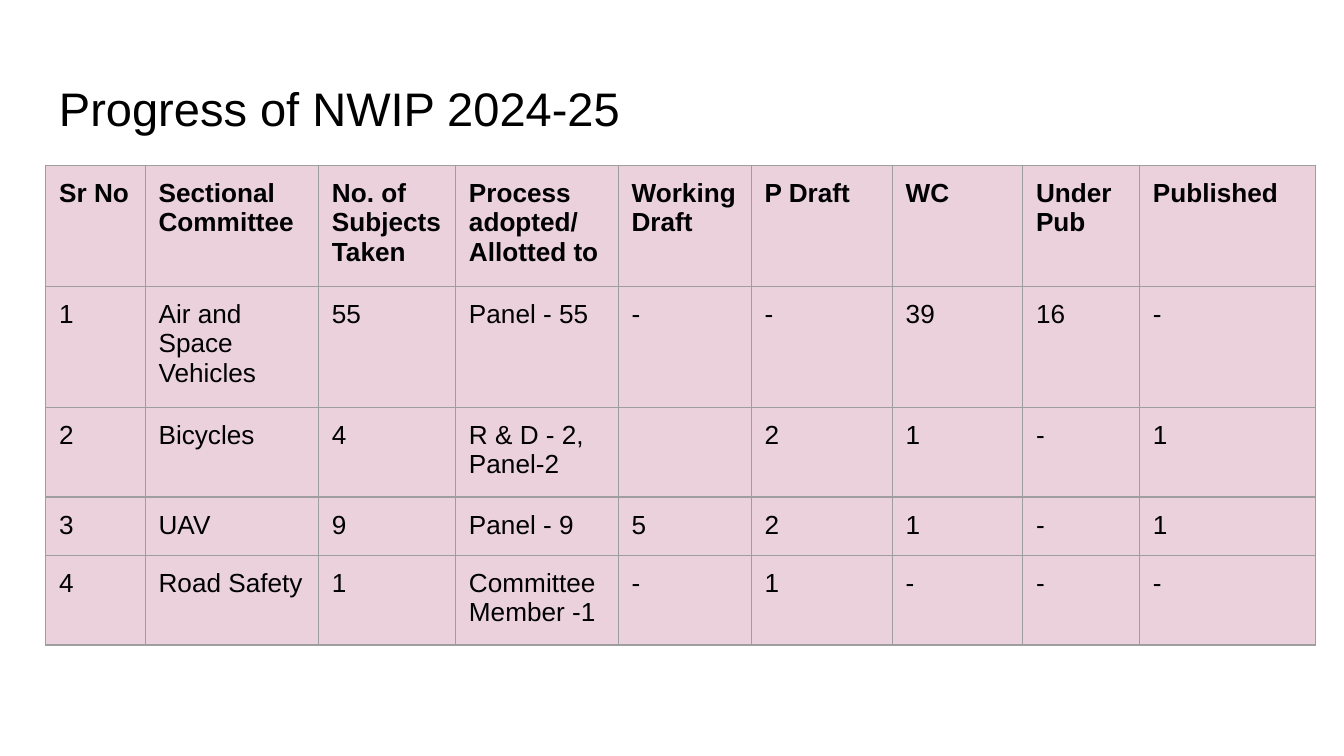
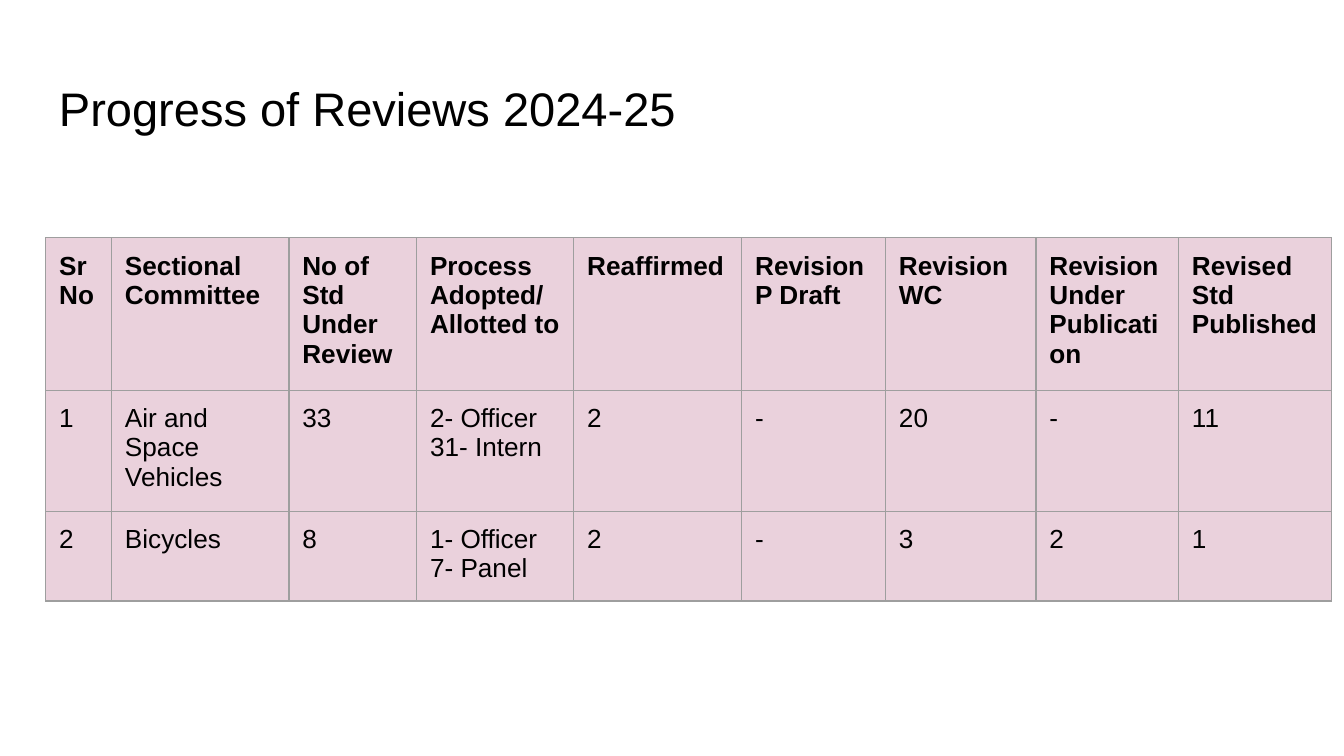
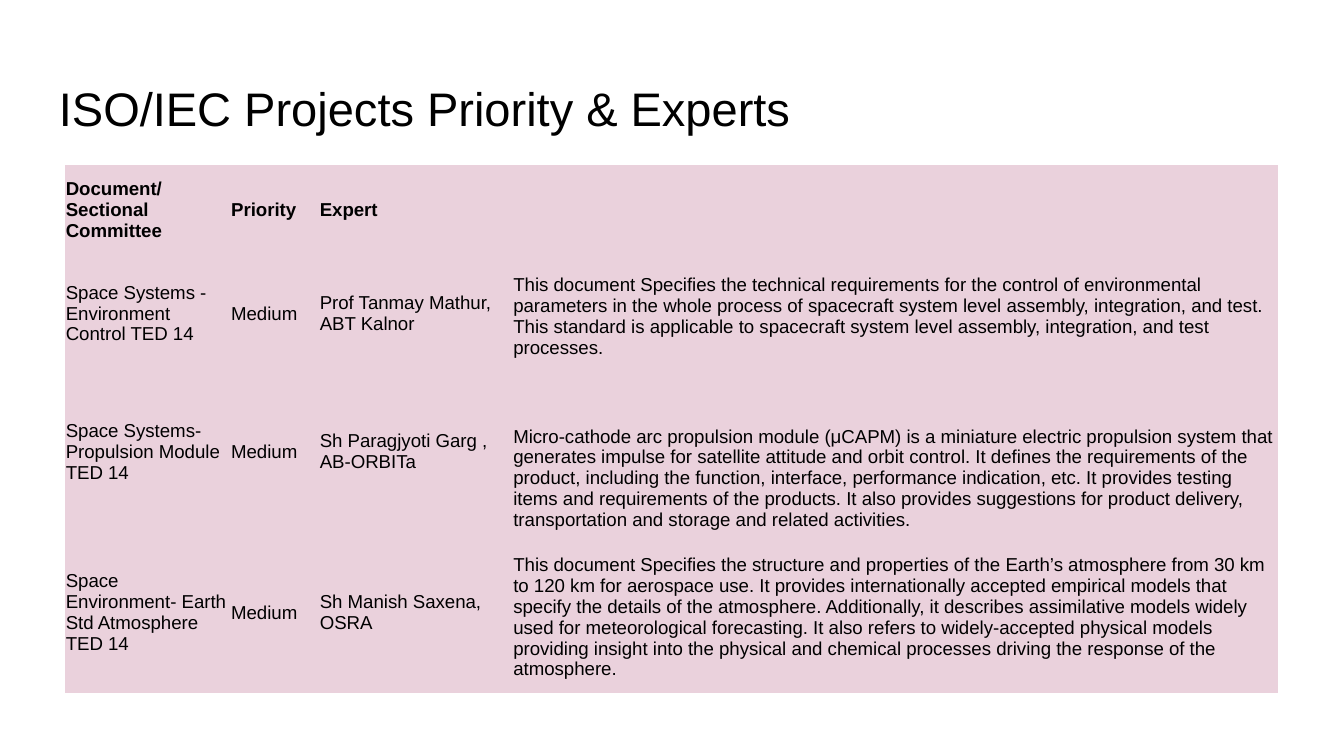
import dataclasses

import lxml.etree
import pptx
import pptx.dml.color
import pptx.enum.text
import pptx.oxml.ns
import pptx.util

Inches = pptx.util.Inches
Pt = pptx.util.Pt
Anchor = pptx.enum.text.MSO_ANCHOR
qualified = pptx.oxml.ns.qn


@dataclasses.dataclass(frozen=True)
class Theme:
    font: str = "Arial"
    ink: str = "000000"
    cell: str = "EAD1DC"
    border: str = "9E9E9E"
    border_width: float = 0.75
    title_size: float = 25.2
    progress_size: float = 14
    expert_size: float = 10


THEME = Theme()
ROOMY = (0.1, 0.1, 0.1, 0.1)
TIGHT = (0.01, 0.01, 0.01, 0.1)

NWIP_ROWS = [
    ["Sr No", "Sectional Committee", "No. of Subjects Taken", "Process adopted/ Allotted to",
     "Working Draft", "P Draft", "WC", "Under Pub", "Published"],
    ["1", "Air and Space Vehicles", "55", "Panel - 55", "-", "-", "39", "16", "-"],
    ["2", "Bicycles", "4", "R & D - 2, Panel-2", "", "2", "1", "-", "1"],
    ["3", "UAV", "9", "Panel - 9", "5", "2", "1", "-", "1"],
    ["4", "Road Safety", "1", "Committee Member -1", "-", "1", "-", "-", "-"],
]

REVIEW_ROWS = [
    ["Sr No", "Sectional Committee", "No of Std Under Review", "Process Adopted/ Allotted to",
     "Reaffirmed", "Revision\nP Draft", "Revision\nWC", "Revision\nUnder Publication",
     "Revised Std Published"],
    ["1", "Air and Space Vehicles", "33", "2- Officer\n31- Intern", "2", "-", "20", "-", "11"],
    ["2", "Bicycles", "8", "1- Officer 7- Panel", "2", "-", "3", "2", "1"],
]

EXPERT_ROWS = [
    ["Document/Sectional Committee", "Priority", "Expert", ""],
    ["Space Systems - Environment Control TED 14", "Medium", "Prof Tanmay Mathur, ABT Kalnor",
     "This document Specifies the technical requirements for the control of environmental "
     "parameters in the whole process of spacecraft system level assembly, integration, and "
     "test. This standard is applicable to spacecraft system level assembly, integration, and "
     "test processes."],
    ["Space Systems- Propulsion Module TED 14", "Medium", "Sh Paragjyoti Garg , AB-ORBITa",
     "Micro-cathode arc propulsion module (μCAPM) is a miniature electric propulsion system "
     "that generates impulse for satellite attitude and orbit control. It defines the "
     "requirements of the product, including the function, interface, performance indication, "
     "etc. It provides testing items and requirements of the products. It also provides "
     "suggestions for product delivery, transportation and storage and related activities."],
    ["Space Environment- Earth Std Atmosphere TED 14", "Medium", "Sh Manish Saxena, OSRA",
     "This document Specifies the structure and properties of the Earth’s atmosphere from 30 km "
     "to 120 km for aerospace use. It provides internationally accepted empirical models that "
     "specify the details of the atmosphere. Additionally, it describes assimilative models "
     "widely used for meteorological forecasting. It also refers to widely-accepted physical "
     "models providing insight into the physical and chemical processes driving the response "
     "of the atmosphere."],
]


def style_text(frame, size, bold=False):
    for paragraph in frame.paragraphs:
        paragraph.font.name = THEME.font
        paragraph.font.size = Pt(size)
        paragraph.font.bold = bold
        paragraph.font.color.rgb = pptx.dml.color.RGBColor.from_string(THEME.ink)
        for span in paragraph.runs:
            span.font.size = Pt(size)
        end_mark = lxml.etree.SubElement(paragraph._p, qualified("a:endParaRPr"))
        end_mark.set("sz", str(round(size * 100)))


def set_margins(target, margins):
    sides = ("left", "top", "right", "bottom")
    for side, margin in zip(sides, margins):
        setattr(target, f"margin_{side}", Inches(margin))


def add_titled_page(deck, title):
    page = deck.slides.add_slide(deck.slide_layouts[6])
    box = page.shapes.add_textbox(Inches(0.34), Inches(0.49), Inches(9.32), Inches(0.63))
    frame = box.text_frame
    frame.word_wrap = True
    set_margins(frame, ROOMY)
    frame.text = title
    style_text(frame, THEME.title_size)
    return page


def set_borders(cell, visible):
    properties = cell._tc.get_or_add_tcPr()
    for side in ("lnL", "lnR", "lnT", "lnB"):
        line = lxml.etree.SubElement(properties, qualified(f"a:{side}"))
        if visible:
            line.set("w", str(Pt(THEME.border_width)))
            fill = lxml.etree.SubElement(line, qualified("a:solidFill"))
            lxml.etree.SubElement(fill, qualified("a:srgbClr")).set("val", THEME.border)
        else:
            lxml.etree.SubElement(line, qualified("a:noFill"))


def fill_cell(cell, text, size, bold, margins, bordered):
    cell.text = text
    style_text(cell.text_frame, size, bold)
    set_margins(cell, margins)
    set_borders(cell, bordered)
    cell.fill.solid()
    cell.fill.fore_color.rgb = pptx.dml.color.RGBColor.from_string(THEME.cell)


def add_grid(page, left, top, widths, heights, rows, size, margins=ROOMY, bordered=True):
    table = page.shapes.add_table(
        len(rows), len(widths), Inches(left), Inches(top),
        Inches(sum(widths)), Inches(sum(heights))).table
    table.first_row = False
    table.horz_banding = False
    for column, width in zip(table.columns, widths):
        column.width = Inches(width)
    for row, height in zip(table.rows, heights):
        row.height = Inches(height)
    for row_index, texts in enumerate(rows):
        for column_index, text in enumerate(texts):
            fill_cell(table.cell(row_index, column_index), text, size,
                      row_index == 0, margins, bordered)
    return table


def add_progress_table(page, top, widths, rows):
    add_grid(page, 0.34, top, widths, [0.42] * len(rows), rows, THEME.progress_size)


def add_expert_table(page):
    table = add_grid(page, 0.48, 1.23, [1.23, 0.66, 1.44, 5.7], [0.76, 0.76, 1.28, 0.65],
                     EXPERT_ROWS, THEME.expert_size, TIGHT, bordered=False)
    for cell in table.iter_cells():
        cell.vertical_anchor = Anchor.MIDDLE
    for row_index in range(1, len(EXPERT_ROWS)):
        table.cell(row_index, 3).vertical_anchor = Anchor.BOTTOM


def main():
    deck = pptx.Presentation()
    deck.slide_width = Inches(10)
    deck.slide_height = deck.slide_width * 9 // 16

    nwip_page = add_titled_page(deck, "Progress of NWIP 2024-25")
    add_progress_table(nwip_page, 1.23,
                       [0.74, 1.29, 1.02, 1.21, 0.99, 1.05, 0.97, 0.87, 1.31], NWIP_ROWS)

    review_page = add_titled_page(deck, "Progress of Reviews 2024-25")
    add_progress_table(review_page, 1.77,
                       [0.49, 1.32, 0.95, 1.17, 1.25, 1.07, 1.12, 1.06, 1.14], REVIEW_ROWS)

    expert_page = add_titled_page(deck, "ISO/IEC Projects Priority & Experts")
    add_expert_table(expert_page)

    deck.save("out.pptx")


if __name__ == "__main__":
    main()
